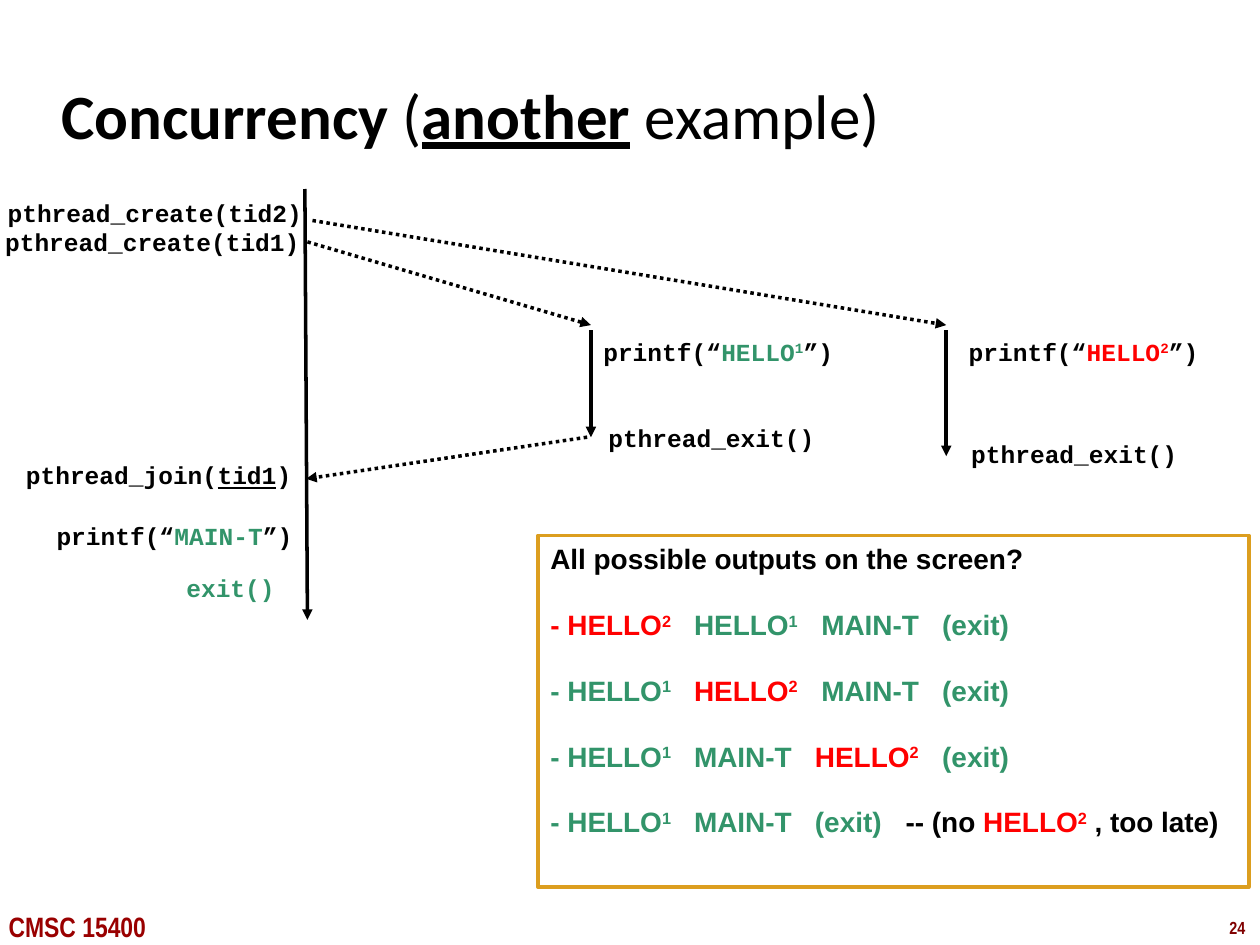
import pptx
import pptx.util
import pptx.dml.color
import pptx.enum.dml
import pptx.enum.shapes
import pptx.enum.text
import pptx.oxml
import pptx.oxml.ns

Inches, Pt = pptx.util.Inches, pptx.util.Pt
ALIGN = pptx.enum.text.PP_ALIGN
ANCHOR = pptx.enum.text.MSO_ANCHOR
DASH = pptx.enum.dml.MSO_LINE
qn = pptx.oxml.ns.qn

INK = {"black": "000000", "green": "32946A", "red": "FF0000",
       "gold": "DC9E1F", "maroon": "800000", "brick": "990000"}
CODE = {"name": "Courier New", "size": Pt(14), "bold": True}
HEAD = {"name": "Calibri", "size": Pt(36), "bold": True}
BODY = {"name": "Arial", "size": Pt(16), "bold": True}
FOOT = {"name": "Arial Narrow", "size": Pt(16), "bold": True}
PAGE = FOOT | {"size": Pt(10)}

SUPER = {"raised": True}
UNDER = {"underline": True}
PLAIN = {"bold": False}


def rgb(name):
    return pptx.dml.color.RGBColor.from_string(INK[name])


def write(para, runs, style):
    """Add runs given as (text, colour, changes to the style)."""
    for text, color, *extra in runs:
        run = para.add_run()
        run.text = text
        form = style | (extra[0] if extra else {})
        if form.pop("raised", False):
            run._r.get_or_add_rPr().set("baseline", "30000")
        for key, value in form.items():
            setattr(run.font, key, value)
        run.font.color.rgb = rgb(color)


def label(slide, box, runs, style=CODE, align=ALIGN.LEFT,
          anchor=ANCHOR.TOP, wrap=True):
    shape = slide.shapes.add_textbox(*map(Inches, box))
    frame = shape.text_frame
    frame.word_wrap = wrap
    frame.vertical_anchor = anchor
    para = frame.paragraphs[0]
    para.alignment = align
    write(para, runs, style)


def arrow(slide, start, end, dash=None):
    line = slide.shapes.add_connector(
        pptx.enum.shapes.MSO_CONNECTOR.STRAIGHT,
        *map(Inches, (*start, *end)))
    line.line.color.rgb = rgb("black")
    line.line.width = Pt(2)
    if dash:
        line.line.dash_style = dash
    pen = line.line._get_or_add_ln()
    pen.append(pen.makeelement(qn("a:tailEnd"), {"type": "triangle"}))
    props = line._element.spPr
    props.append(props.makeelement(qn("a:effectLst"), {}))


def title(slide, box):
    label(slide, box, [
        ("Concurrency ", "black"), ("(", "black", PLAIN),
        ("another", "black", UNDER), (" example)", "black", PLAIN),
    ], HEAD, anchor=ANCHOR.MIDDLE)


def main_thread(slide, x, y):
    """Draw the main time line from its top, with calls on its left."""
    arrow(slide, (x, y), (x + 0.02, y + 3.42))
    calls = [
        (-2.48, 0.02, 2.56, [("pthread_create(tid2)", "black")]),
        (-2.50, 0.25, 2.56, [("pthread_create(tid1)", "black")]),
        (-2.33, 2.10, 2.32, [("pthread_join(", "black"),
                             ("tid1", "black", UNDER), (")", "black")]),
        (-1.81, 3.00, 1.67, [("exit()", "green")]),
    ]
    for dx, dy, width, runs in calls:
        label(slide, (x + dx, y + dy, width, 0.34), runs,
              align=ALIGN.RIGHT, wrap=False)
    label(slide, (x - 2.07, y + 2.58, 2.32, 0.34),
          [("printf(“", "black"), ("MAIN-T", "green"), ("”)", "black")],
          anchor=ANCHOR.MIDDLE)


def worker(slide, x, y, length, mark, color, print_dx, exit_at):
    """Draw a worker's time line from its top, with calls on its right."""
    arrow(slide, (x, y), (x, y + length))
    label(slide, (x + print_dx, y, 2.17, 0.34),
          [("printf(“", "black"), ("HELLO", color), (mark, color, SUPER),
           ("”)", "black")], anchor=ANCHOR.MIDDLE)
    dx, dy = exit_at
    label(slide, (x + dx, y + dy, 2.17, 0.34),
          [("pthread_exit()", "black")], anchor=ANCHOR.MIDDLE)


def set_tabs(para, stops):
    props = para._p.get_or_add_pPr()
    tabs = props.makeelement(qn("a:tabLst"), {})
    for stop in stops:
        tabs.append(tabs.makeelement(
            qn("a:tab"), {"pos": str(int(Inches(stop))), "algn": "l"}))
    props.append(tabs)


def outputs(slide, box):
    shape = slide.shapes.add_shape(
        pptx.enum.shapes.MSO_SHAPE.RECTANGLE, *map(Inches, box))
    shape.shadow.inherit = False
    shape.fill.background()
    shape.line.color.rgb = rgb("gold")
    shape.line.width = Pt(2.25)
    frame = shape.text_frame
    frame.word_wrap = True
    frame.vertical_anchor = ANCHOR.TOP
    first = frame.paragraphs[0]
    first.alignment = ALIGN.LEFT
    write(first, [("All possible outputs on the screen?", "black")], BODY)

    one = [("HELLO", "green"), ("1", "green", SUPER)]
    two = [("HELLO", "red"), ("2", "red", SUPER)]
    main = [("MAIN-T", "green")]
    done = [("(exit)", "green")]
    late = [("-- (no ", "black"), *two, (" , too late)", "black")]
    rows = [
        ((1.14, 2.15, 3.11), (two, one, main, done)),
        ((1.14, 2.15, 3.11), (one, two, main, done)),
        ((1.14, 2.10, 3.11), (one, main, two, done)),
        ((1.14, 2.10, 2.82), (one, main, done, late)),
    ]
    for stops, steps in rows:
        para = frame.add_paragraph()
        para.alignment = ALIGN.LEFT
        para.space_before = Pt(18.4)
        set_tabs(para, stops)
        write(para, [("- ", steps[0][0][1])], BODY)
        for spot, step in enumerate(steps):
            if spot:
                write(para, [("\t", "black")], BODY)
            write(para, step, BODY)


def footer(slide, x, y):
    label(slide, (x, y, 1.42, 0.37), [("CMSC 15400", "brick")], FOOT,
          wrap=False)
    label(slide, (x + 9.69, y + 0.06, 0.34, 0.27), [("24", "maroon")], PAGE,
          wrap=False)


def main():
    deck = pptx.Presentation()
    deck.slide_width, deck.slide_height = Inches(10), Inches(7.5)
    slide = deck.slides.add_slide(deck.slide_layouts[6])
    footer(slide, -0.03, 7.17)
    title(slide, (0.39, 0.49, 8.3, 0.83))
    main_thread(slide, 2.42, 1.5)
    worker(slide, 4.69, 2.62, 0.85, "1", "green", 0, (0.04, 0.68))
    worker(slide, 7.51, 2.62, 1, "2", "red", 0.08, (0.1, 0.81))
    for start, end in [((2.44, 1.92), (4.69, 2.58)),
                       ((2.48, 1.75), (7.51, 2.58)),
                       ((4.66, 3.47), (2.43, 3.8))]:
        arrow(slide, start, end, DASH.ROUND_DOT)
    outputs(slide, (4.27, 4.25, 5.64, 2.79))
    deck.save("out.pptx")


if __name__ == "__main__":
    main()
